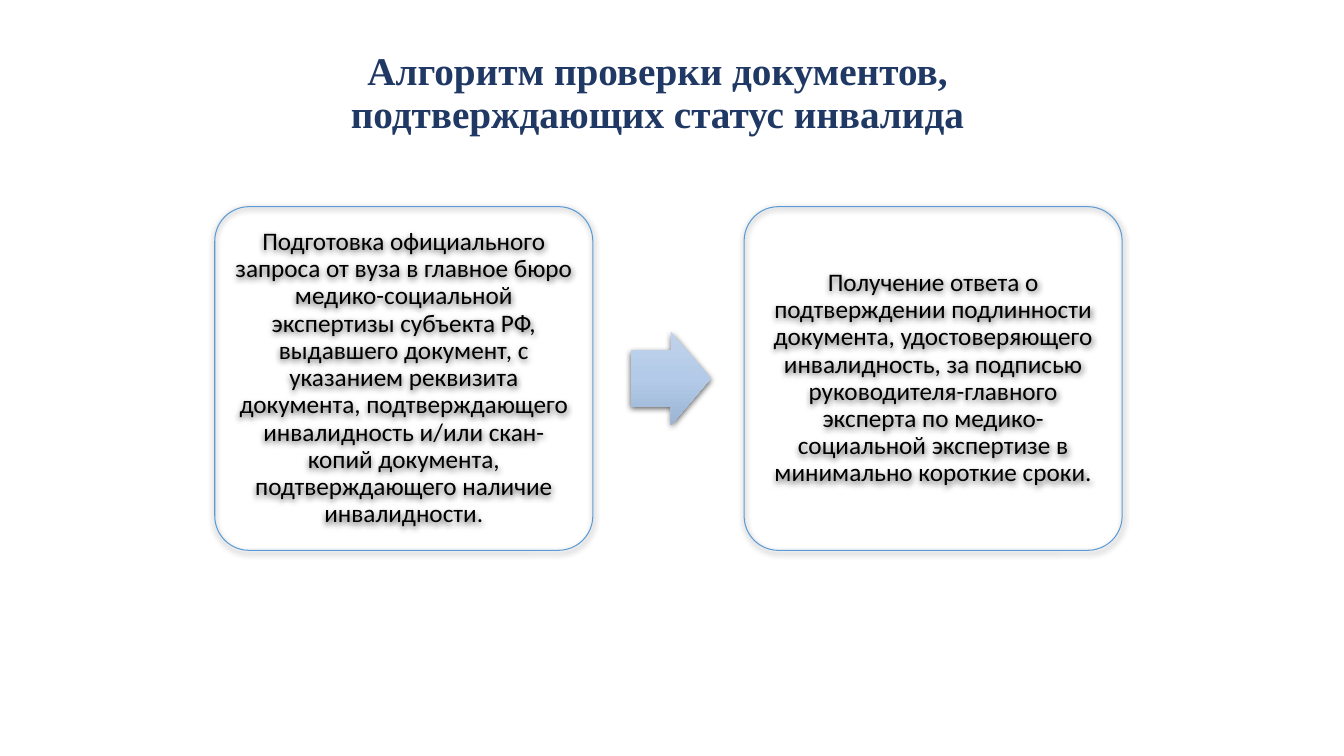
from copy import deepcopy
from dataclasses import dataclass

from lxml import etree
from pptx import Presentation
from pptx.dml.color import RGBColor
from pptx.enum.shapes import MSO_SHAPE as SHAPE
from pptx.enum.text import MSO_ANCHOR as ANCHOR, PP_ALIGN as ALIGN
from pptx.oxml.ns import qn
from pptx.util import Inches, Pt

COLORS = {
    "title": "203864",
    "text": "000000",
    "border": "5B9BD5",
    "shadow": "000000",
    "arrow_top": "C0D2EB",
    "arrow_middle": "B3CBE9",
    "arrow_bottom": "9BB4D3",
}
BOX_TOP, BOX_WIDTH, BOX_HEIGHT = 2.05, 3.75, 3.41


@dataclass
class Step:
    left: float
    text: str


STEPS = [
    Step(2.13, "Подготовка официального запроса от вуза в главное бюро "
               "медико-социальной экспертизы субъекта РФ, выдавшего документ, "
               "с указанием реквизита документа, подтверждающего инвалидность "
               "и/или скан-копий документа, подтверждающего наличие инвалидности."),
    Step(7.38, "Получение ответа о подтверждении подлинности документа, "
               "удостоверяющего инвалидность, за подписью руководителя-главного "
               "эксперта по медико-социальной экспертизе в минимально короткие сроки."),
]


def rgb(name: str) -> RGBColor:
    return RGBColor.from_string(COLORS[name])


def write(s, text: str, font: str, size: float, color: str, bold: bool = False) -> None:
    tf = s.text_frame
    tf.word_wrap = True
    tf.vertical_anchor = ANCHOR.MIDDLE
    p = tf.paragraphs[0]
    p.alignment = ALIGN.CENTER
    p.line_spacing = 0.9
    r = p.add_run()
    r.text = text
    r.font.name = font
    r.font.size = Pt(size)
    r.font.bold = bold
    r.font.color.rgb = rgb(color)


def add_shadow(s) -> None:
    s.shadow.inherit = False
    effects = s._element.spPr.find(qn("a:effectLst"))
    shadow = etree.SubElement(
        effects, qn("a:outerShdw"), blurRad=str(Pt(4.5)), dist=str(Pt(1.5)),
        dir="5400000", algn="ctr", rotWithShape="0")
    color = etree.SubElement(shadow, qn("a:srgbClr"), val=COLORS["shadow"])
    etree.SubElement(color, qn("a:alpha"), val="63000")


def add_step(slide, step: Step) -> None:
    s = slide.shapes.add_shape(
        SHAPE.ROUNDED_RECTANGLE, Inches(step.left), Inches(BOX_TOP),
        Inches(BOX_WIDTH), Inches(BOX_HEIGHT))
    s.adjustments[0] = 0.1
    s.fill.background()
    s.line.color.rgb = rgb("border")
    s.line.width = Pt(0.75)
    add_shadow(s)
    tf = s.text_frame
    tf.margin_left = tf.margin_right = tf.margin_top = tf.margin_bottom = Inches(0.07)
    write(s, step.text, "Calibri", 18, "text")


def add_arrow(slide) -> None:
    s = slide.shapes.add_shape(
        SHAPE.RIGHT_ARROW, Inches(6.26), Inches(3.29), Inches(0.79), Inches(0.93))
    s.adjustments[0] = 0.6
    s.adjustments[1] = 0.5
    s.line.fill.background()
    s.fill.gradient()
    s.fill.gradient_angle = 270
    # Third gradient stop
    stop_list = s._element.spPr.find(qn("a:gradFill")).find(qn("a:gsLst"))
    stop_list.append(deepcopy(stop_list[0]))
    names = ["arrow_top", "arrow_middle", "arrow_bottom"]
    for i, (stop, name) in enumerate(zip(s.fill.gradient_stops, names)):
        stop.position = i / 2
        stop.color.rgb = rgb(name)
    add_shadow(s)


def main() -> None:
    prs = Presentation()
    prs.slide_width, prs.slide_height = Inches(13.33), Inches(7.5)
    slide = prs.slides.add_slide(prs.slide_layouts[6])

    # Title
    title = slide.shapes.add_textbox(
        Inches(2.89), Inches(0.31), Inches(7.26), Inches(1.25))
    write(title, "Алгоритм проверки документов, подтверждающих статус инвалида",
          "Times New Roman", 28, "title", bold=True)

    # Process steps and the arrow between them
    for step in STEPS:
        add_step(slide, step)
    add_arrow(slide)

    prs.save("out.pptx")


if __name__ == "__main__":
    main()
